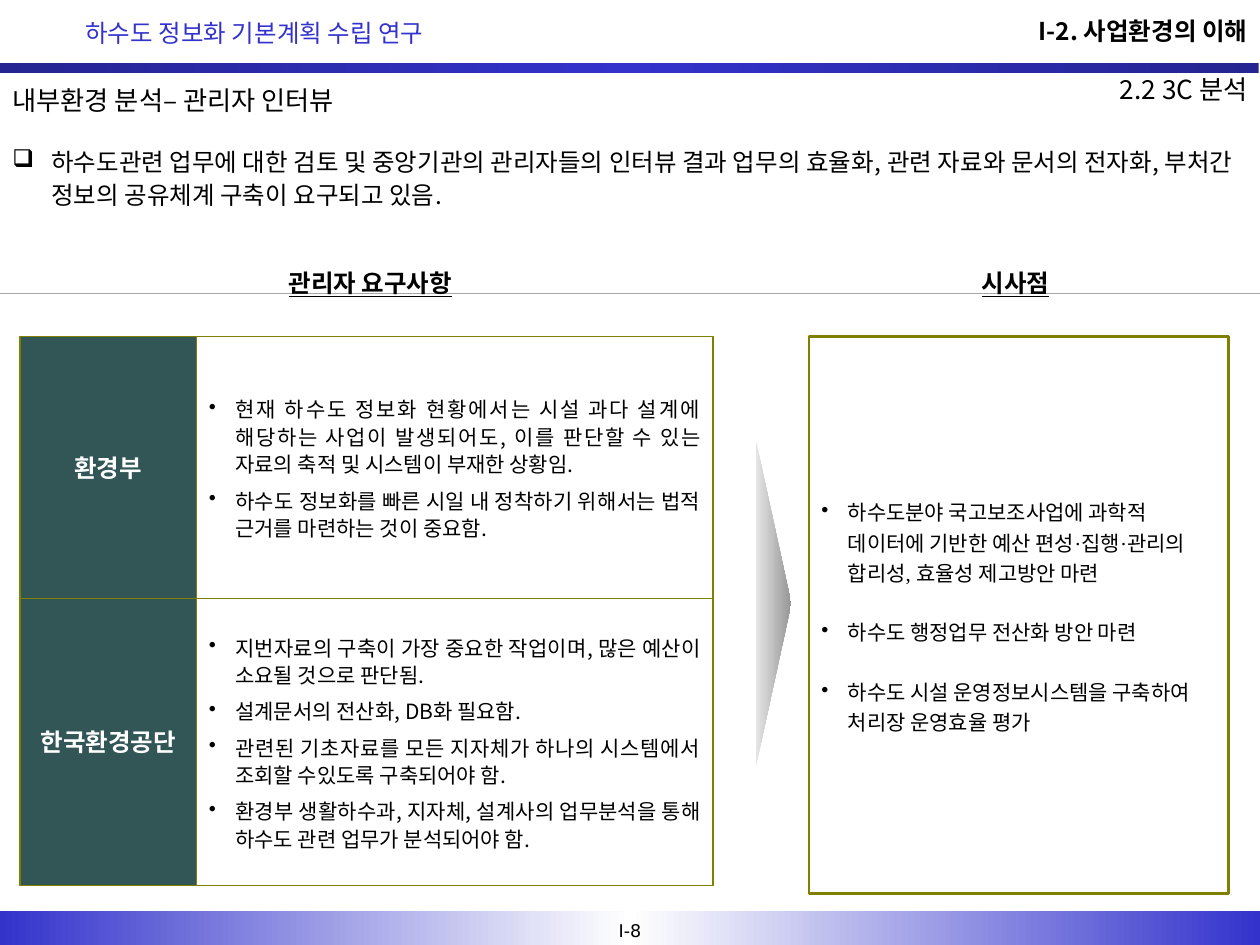
from copy import deepcopy
from dataclasses import dataclass

from lxml import etree
from pptx import Presentation
from pptx import util as u
from pptx.dml.color import RGBColor
from pptx.enum import dml, shapes, text
from pptx.oxml.ns import qn

WIDTH, HEIGHT = u.Inches(10), u.Inches(7.5)
COLS, ROWS = 100, 75

BLACK = RGBColor(0x00, 0x00, 0x00)
WHITE = RGBColor(0xFF, 0xFF, 0xFF)
BLUE = RGBColor(0x33, 0x33, 0xCC)
NAVY = RGBColor(0x24, 0x24, 0x92)
TEAL = RGBColor(0x32, 0x56, 0x56)
OLIVE = RGBColor(0x80, 0x80, 0x00)
PALE = RGBColor(0xE5, 0xE5, 0xE5)
GRAY = RGBColor(0x96, 0x96, 0x96)
DOTS = RGBColor(0xA6, 0xA6, 0xA6)

SANS, SERIF, PLAIN = "Noto Sans CJK KR", "Times New Roman", "DejaVu Sans"
LEFT, MID, RIGHT, FULL = (text.PP_ALIGN.LEFT, text.PP_ALIGN.CENTER,
                          text.PP_ALIGN.RIGHT, text.PP_ALIGN.JUSTIFY)
TOP, CENTER = text.MSO_ANCHOR.TOP, text.MSO_ANCHOR.MIDDLE
RECT = shapes.MSO_SHAPE.RECTANGLE


@dataclass
class Area:
    """A place on the slide grid, in columns and rows."""
    col: float
    row: float
    wide: float
    high: float

    def box(self) -> tuple:
        return (across(self.col), down(self.row),
                across(self.wide), down(self.high))


@dataclass
class Group:
    """One interviewed body and what its managers ask for."""
    name: str
    row: float
    high: float
    needs: list


GROUPS = [
    Group("환경부", 26.7, 20.8, [
        "현재 하수도 정보화 현황에서는 시설 과다 설계에 해당하는 사업이 발생되어도, "
        "이를 판단할 수 있는 자료의 축적 및 시스템이 부재한 상황임.",
        "하수도 정보화를 빠른 시일 내 정착하기 위해서는 법적 근거를 마련하는 것이 중요함."]),
    Group("한국환경공단", 47.5, 22.8, [
        "지번자료의 구축이 가장 중요한 작업이며, 많은 예산이 소요될 것으로 판단됨.",
        "설계문서의 전산화, DB화 필요함.",
        "관련된 기초자료를 모든 지자체가 하나의 시스템에서 조회할 수있도록 구축되어야 함.",
        "환경부 생활하수과, 지자체, 설계사의 업무분석을 통해 하수도 관련 업무가 "
        "분석되어야 함."]),
]
LESSONS = [
    "하수도분야 국고보조사업에 과학적 데이터에 기반한 예산 편성·집행·관리의 합리성, "
    "효율성 제고방안 마련",
    "하수도 행정업무 전산화 방안 마련",
    "하수도 시설 운영정보시스템을 구축하여 처리장 운영효율 평가",
]
SUMMARY = ("하수도관련 업무에 대한 검토 및 중앙기관의 관리자들의 인터뷰 결과 업무의 효율화, "
           "관련 자료와 문서의 전자화, 부처간 정보의 공유체계 구축이 요구되고 있음.")


def across(cols: float) -> int:
    return round(WIDTH * cols / COLS)


def down(rows: float) -> int:
    return round(HEIGHT * rows / ROWS)


def bullet(para, mark: str, indent: float) -> None:
    props = para._p.get_or_add_pPr()
    props.set("marL", str(across(indent)))
    props.set("indent", str(-across(indent)))
    etree.SubElement(props, qn("a:buChar")).set("char", mark)


def write(shape, *lines: str, size=14, face=SANS, color=BLACK, bold=False,
          under=False, align=LEFT, anchor=CENTER, wrap=True, lead=1.0,
          gap=0.0, mark="", indent=2.1) -> None:
    """Fill a shape with paragraphs; gap is a share of the text size."""
    frame = shape.text_frame
    frame.word_wrap, frame.vertical_anchor = wrap, anchor
    frame.auto_size = text.MSO_AUTO_SIZE.NONE
    for i, line in enumerate(lines):
        para = frame.add_paragraph() if i else frame.paragraphs[0]
        if mark:
            bullet(para, mark, indent)
        para.alignment, para.line_spacing = align, lead
        para.space_before = u.Pt(size * gap if i else 0)
        para.space_after = u.Pt(size * gap)
        run = para.add_run()
        run.text = line
        font = run.font
        font.size, font.bold, font.underline = u.Pt(size), bold, under
        font.color.rgb, font.name = color, face
        etree.SubElement(run._r.rPr, qn("a:ea")).set("typeface", SANS)


def label(slide, area: Area, line: str, **style) -> None:
    write(slide.shapes.add_textbox(*area.box()), line, **style)


def block(slide, area: Area, kind=RECT, fill=WHITE, edge=None, weight=0.75):
    shape = slide.shapes.add_shape(kind, *area.box())
    shape.shadow.inherit = False
    if isinstance(fill, list):
        blend(shape, fill)
    else:
        shape.fill.solid()
        shape.fill.fore_color.rgb = fill
    if edge is None:
        shape.line.fill.background()
    else:
        shape.line.color.rgb, shape.line.width = edge, u.Pt(weight)
    return shape


def blend(shape, colors: list) -> None:
    """Spread colours evenly from left to right of the slide."""
    shape.fill.gradient()
    shape.fill.gradient_angle = 0
    grad = shape._element.spPr.find(qn("a:gradFill"))
    grad.set("rotWithShape", "0")
    stops = grad.find(qn("a:gsLst"))
    while len(stops) < len(colors):
        stops.append(deepcopy(stops[0]))
    for i, (stop, color) in enumerate(zip(shape.fill.gradient_stops, colors)):
        stop.color.rgb = color
        stop.position = i / (len(colors) - 1)


def frame(slide) -> None:
    """Draw the bars, the dotted rule and the running heads."""
    block(slide, Area(-0.1, 5, 100, 0.8), fill=[NAVY, BLUE, NAVY])
    block(slide, Area(0, 72.3, 100, 2.7), fill=[BLUE, WHITE, BLUE])
    label(slide, Area(47.2, 72.5, 5.6, 2.7), "I-8", size=10, face=PLAIN,
          align=MID, wrap=False)
    label(slide, Area(5.8, 0.7, 50, 3.6), "하수도 정보화 기본계획 수립 연구",
          color=BLUE, lead=1.1)
    rule = slide.shapes.add_connector(
        shapes.MSO_CONNECTOR.STRAIGHT, 0, down(23.3), WIDTH, down(23.3))
    rule.line.color.rgb, rule.line.width = DOTS, u.Pt(0.25)
    rule.line.dash_style = dml.MSO_LINE.ROUND_DOT
    etree.SubElement(rule._element.spPr, qn("a:effectLst"))
    label(slide, Area(78.8, 0.8, 21.2, 3.3), "I-2. 사업환경의 이해", bold=True,
          align=RIGHT, anchor=TOP, wrap=False)
    label(slide, Area(17.5, 5, 82.5, 4.2), "2.2 3C 분석", size=15, align=RIGHT)


def main() -> None:
    deck = Presentation()
    deck.slide_width, deck.slide_height = WIDTH, HEIGHT
    slide = deck.slides.add_slide(deck.slide_layouts[5])
    frame(slide)

    title = slide.shapes.title
    title.left, title.top, title.width, title.height = Area(0, 5.8, 46.8, 4.2).box()
    write(title, "내부환경 분석– 관리자 인터뷰", size=15)
    label(slide, Area(0, 10.8, 100, 6.4), SUMMARY, anchor=TOP, lead=1.15,
          mark="❑", indent=3.1)

    heads = [("관리자 요구사항", 21.3, 16.2), ("시사점", 76.7, 7.8)]
    for head, col, wide in heads:
        label(slide, Area(col, 20.8, wide, 3.3), head, bold=True, under=True,
              align=MID, anchor=TOP, wrap=False)

    for group in GROUPS:
        body = block(slide, Area(15.6, group.row, 41, group.high), edge=OLIVE)
        write(body, *group.needs, size=12, align=FULL, lead=1.1, gap=0.2, mark="•")
        name = block(slide, Area(1.6, group.row, 14, group.high),
                     fill=TEAL, edge=OLIVE)
        write(name, group.name, color=WHITE, bold=True, align=MID, wrap=False)

    arrow = block(slide, Area(48.5, 46.5, 25.8, 2.8), fill=[PALE, GRAY],
                  kind=shapes.MSO_SHAPE.ISOSCELES_TRIANGLE)
    arrow.rotation = 90
    panel = block(slide, Area(64.2, 26.7, 33.3, 44.2), edge=OLIVE, weight=1.5)
    write(panel, *LESSONS, size=12, face=SERIF, lead=1.2, gap=0.7, mark="•")
    deck.save("out.pptx")


if __name__ == "__main__":
    main()
